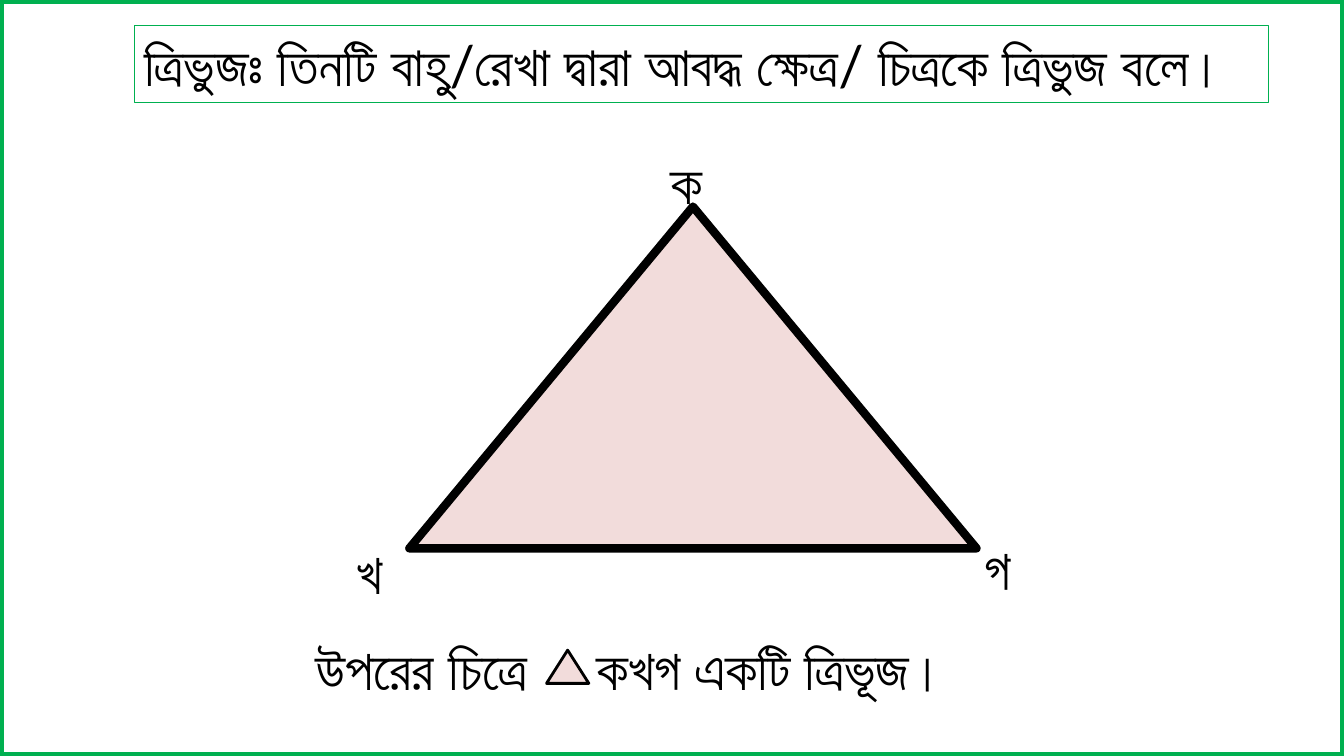
"""Build a slide that defines a triangle and names its three corners."""
from dataclasses import dataclass

from lxml.etree import SubElement
from pptx import Presentation
from pptx.dml.color import RGBColor as RGB
from pptx.enum.shapes import MSO_SHAPE as SHAPE
from pptx.enum.text import MSO_ANCHOR as ANCHOR, MSO_AUTO_SIZE as AUTO, PP_ALIGN as ALIGN
from pptx.oxml.ns import qn
from pptx.util import Inches, Pt


@dataclass(frozen=True)
class Theme:
    font: str = "Lato"
    size: int = 40
    ink: str = "000000"
    frame: str = "00B050"
    fill: str = "F2DCDB"
    text_rows: float = 10.27


class Slide:
    """Places elements on a grid of 100 columns by 100 rows."""

    def __init__(self, prs, theme):
        self.theme = theme
        self.s = prs.slides.add_slide(prs.slide_layouts[6])
        self.col, self.row = prs.slide_width / 100, prs.slide_height / 100

    def place(self, x, y, w, h):
        return int(x * self.col), int(y * self.row), int(w * self.col), int(h * self.row)

    def shape(self, kind, box, line, width, fill=None):
        sp = self.s.shapes.add_shape(kind, *self.place(*box))
        sp.shadow.inherit = False
        sp.line.color.rgb = RGB.from_string(line)
        sp.line.width = Pt(width)
        if fill:
            sp.fill.solid()
            sp.fill.fore_color.rgb = RGB.from_string(fill)
        else:
            sp.fill.background()
        return sp

    def frame(self, box, width):
        return self.shape(SHAPE.RECTANGLE, box, self.theme.frame, width)

    def triangle(self, box, width):
        t = self.theme
        return self.shape(SHAPE.FLOWCHART_EXTRACT, box, t.ink, width, t.fill)

    def set_text(self, sp, text, tab=None):
        tf = sp.text_frame
        tf.text = text
        tf.word_wrap = True
        tf.auto_size = AUTO.SHAPE_TO_FIT_TEXT
        tf.vertical_anchor = ANCHOR.TOP
        p = tf.paragraphs[0]
        p.alignment = ALIGN.LEFT
        if tab:
            tabs = SubElement(p._p.get_or_add_pPr(), qn("a:tabLst"))
            SubElement(tabs, qn("a:tab"), pos=str(int(tab * self.col)), algn="l")
        for r in p.runs:
            r.font.name = self.theme.font
            r.font.size = Pt(self.theme.size)
            r.font.color.rgb = RGB.from_string(self.theme.ink)
            SubElement(r._r.get_or_add_rPr(), qn("a:cs"), typeface=self.theme.font)

    def heading(self, text, x, y, w):
        self.set_text(self.frame((x, y, w, self.theme.text_rows), 0.75), text)

    def label(self, text, x, y, w=4.8, tab=None):
        box = self.place(x, y, w, self.theme.text_rows)
        self.set_text(self.s.shapes.add_textbox(*box), text, tab)


def main():
    prs = Presentation()
    prs.slide_width, prs.slide_height = Inches(13.33), Inches(7.5)
    slide = Slide(prs, Theme())

    slide.frame((0, 0, 100, 100), 6)
    slide.heading("ত্রিভুজঃ তিনটি বাহু/রেখা দ্বারা আবদ্ধ ক্ষেত্র/ চিত্রকে ত্রিভুজ বলে।", 10, 3.33, 84.4)

    slide.triangle((30.46, 27.33, 42.2, 45.2), 6)
    for corner, x, y in (("ক", 49.14, 18.93), ("খ", 25.8, 70.53), ("গ", 72.54, 70)):
        slide.label(corner, x, y)

    slide.label("উপরের চিত্রে\tকখগ একটি ত্রিভূজ।", 22.73, 83.33, 57.7, tab=20.9)
    slide.triangle((40.66, 86, 3.15, 4.4), 2)
    prs.save("out.pptx")


if __name__ == "__main__":
    main()
